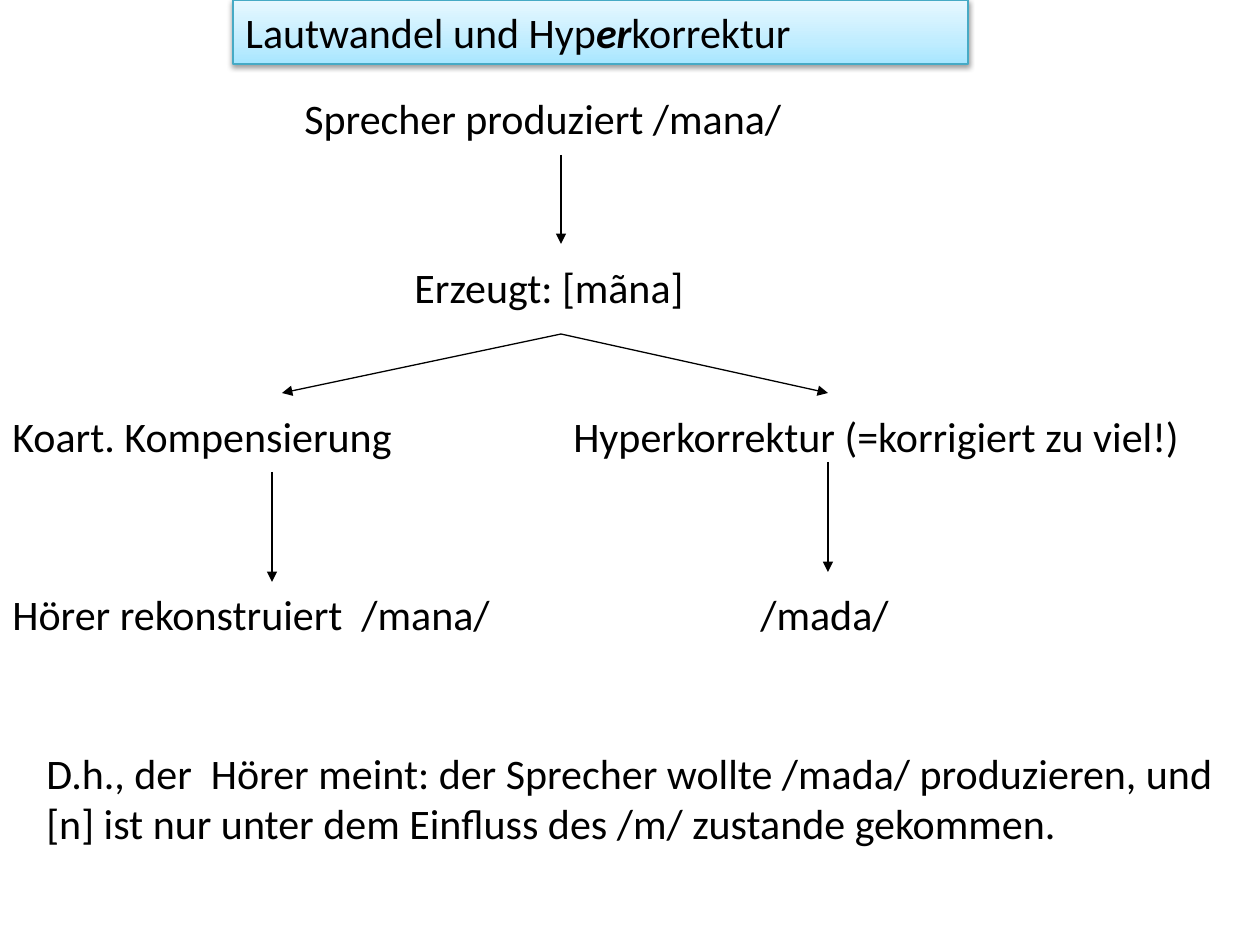
from copy import deepcopy
from lxml.etree import SubElement as Sub
from pptx import Presentation
from pptx.dml.color import RGBColor as Rgb
from pptx.enum.shapes import MSO_CONNECTOR as Conn, MSO_SHAPE as Shape
from pptx.enum.text import MSO_ANCHOR as Anchor, MSO_AUTO_SIZE as Auto, PP_ALIGN as Align
from pptx.oxml.ns import qn
from pptx.util import Pt

PX = 914400 / 126
FONT, SIZE = "Calibri", 24
COL = {
    "ink": "000000",
    "edge": "46AAC5",
    "low": "A7E6FF",
    "mid": "C1EDFF",
    "high": "E7F8FF",
}


def px(*vals):
    return [round(v * PX) for v in vals]


def rgb(name):
    return Rgb.from_string(COL[name])


def write(shape, runs, wrap):
    """Fill a shape with runs of (text, stressed)."""
    frame = shape.text_frame
    frame.word_wrap = wrap
    frame.auto_size = Auto.SHAPE_TO_FIT_TEXT
    frame.vertical_anchor = Anchor.TOP
    para = frame.paragraphs[0]
    para.alignment = Align.LEFT
    for text, stress in runs:
        run = para.add_run()
        run.text = text
        font = run.font
        font.name, font.size = FONT, Pt(SIZE)
        font.bold = font.italic = stress
        font.color.rgb = rgb("ink")


def label(slide, text, box, wrap=False):
    write(slide.shapes.add_textbox(*px(*box)), [(text, False)], wrap)


def shade(shape):
    """Three-stop gradient, light at the top."""
    fill = shape.fill
    fill.gradient()
    fill.gradient_angle = 90
    stops = shape._element.spPr.find(qn("a:gradFill")).find(qn("a:gsLst"))
    stops.append(deepcopy(stops[-1]))
    for stop, pos, name in zip(fill.gradient_stops, (0, 0.35, 1), ("low", "mid", "high")):
        stop.position = pos
        stop.color.rgb = rgb(name)


def drop(shape):
    """Soft shadow below the shape."""
    shape.shadow.inherit = False
    effect = shape._element.spPr.find(qn("a:effectLst"))
    outer = Sub(effect, qn("a:outerShdw"), blurRad=str(Pt(3.1)),
                dist=str(Pt(1.6)), dir="5400000", rotWithShape="0")
    tint = Sub(outer, qn("a:srgbClr"), val=COL["ink"])
    Sub(tint, qn("a:alpha"), val="38000")


def title(slide, runs, box):
    bar = slide.shapes.add_shape(Shape.RECTANGLE, *px(*box))
    shade(bar)
    bar.line.color.rgb = rgb("edge")
    bar.line.width = Pt(0.75)
    drop(bar)
    write(bar, runs, True)


def arrow(slide, start, end):
    link = slide.shapes.add_connector(Conn.STRAIGHT, *px(*start, *end))
    link.line.color.rgb = rgb("ink")
    link.line.width = Pt(0.75)
    Sub(link.line._get_or_add_ln(), qn("a:tailEnd"), type="triangle")
    Sub(link._element.spPr, qn("a:effectLst"))


def main():
    deck = Presentation()
    deck.slide_width, deck.slide_height = px(1260, 945)
    slide = deck.slides.add_slide(deck.slide_layouts[6])

    # Heading
    title(slide, [("Lautwandel und Hyp", False), ("er", True), ("korrektur", False)],
          (233, 0, 735, 64))

    # Steps of the diagram
    for text, left, top, width in (
        ("Sprecher produziert /mana/", 292, 86, 509),
        ("Erzeugt: [mãna]", 402, 255, 299),
        ("Koart. Kompensierung", 0, 404, 410),
        ("Hyperkorrektur (=korrigiert zu viel!)", 561, 404, 641),
        ("Hörer rekonstruiert  /mana/", 0, 582, 512),
        ("/mada/", 748, 582, 156),
    ):
        label(slide, text, (left, top, width, 64))

    # Arrows between the steps
    fork = (561, 334)
    for start, end in (
        ((561, 155), (561, 244)),
        (fork, (282, 393)),
        (fork, (828, 393)),
        ((272, 472), (272, 582)),
        ((828, 462), (828, 572)),
    ):
        arrow(slide, start, end)

    # Conclusion
    label(slide, "D.h., der  Hörer meint: der Sprecher wollte /mada/ produzieren, und "
          "[n] ist nur unter dem Einfluss des /m/ zustande gekommen.",
          (34, 741, 1226, 115), wrap=True)

    deck.save("out.pptx")


if __name__ == "__main__":
    main()
